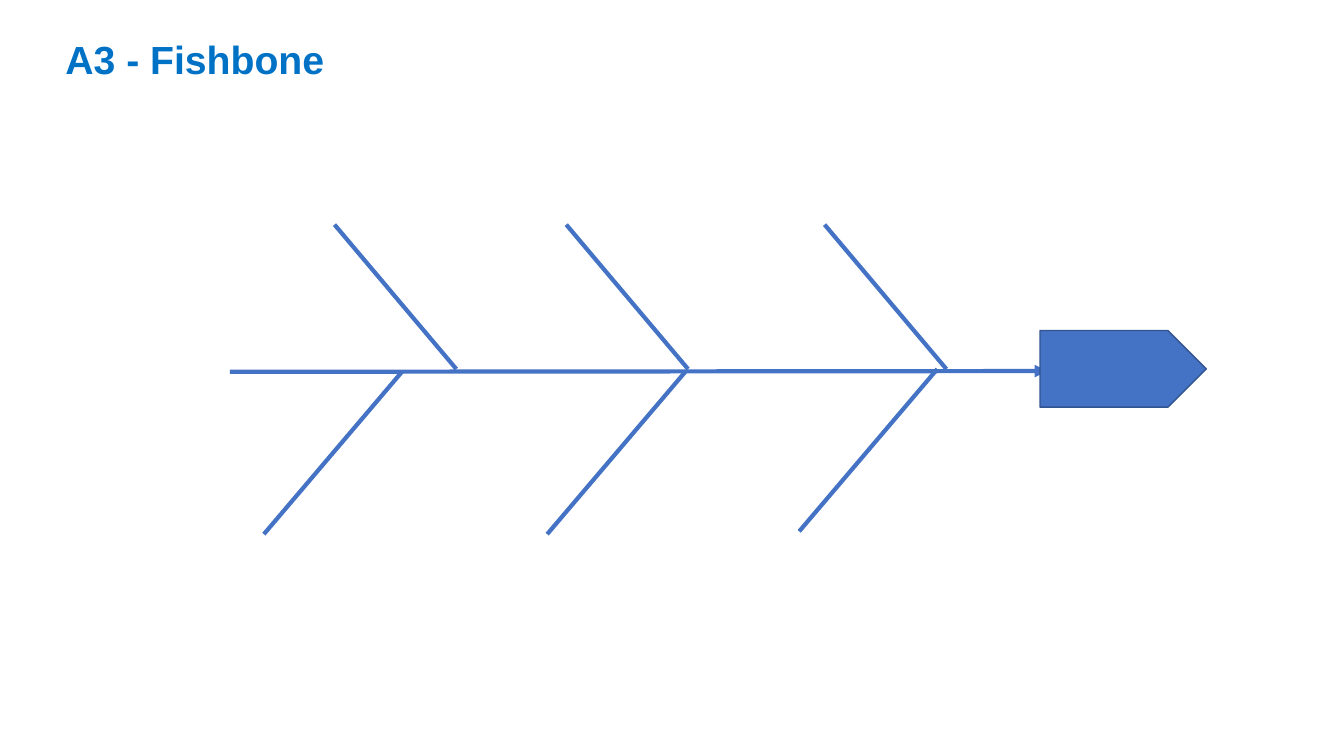
from dataclasses import dataclass

from pptx import Presentation
from pptx.dml.color import RGBColor as RGB
from pptx.enum.shapes import MSO_CONNECTOR as CONN, MSO_SHAPE as SHAPE
from pptx.enum.text import MSO_ANCHOR as ANCHOR
from pptx.oxml.ns import qn
from pptx.util import Cm, Pt
from lxml.etree import SubElement


@dataclass(frozen=True)
class Theme:
    title: RGB = RGB(0x00, 0x72, 0xC6)
    bone: RGB = RGB(0x44, 0x72, 0xC4)
    outline: RGB = RGB(0x32, 0x54, 0x91)
    font: str = "Arial"
    title_size: Pt = Pt(28)
    bone_width: Pt = Pt(3)
    outline_width: Pt = Pt(1)


THEME = Theme()
UPPER_STARTS = [(8.43, 5.66), (14.27, 5.66), (20.78, 5.66)]
UPPER_SPAN = (3.07, 3.64)
LOWER_STARTS = [(10.13, 9.37), (17.27, 9.37), (23.62, 9.3)]
LOWER_SPAN = (-3.48, 4.09)


def add_title(s, text, x, y, w, h):
    tf = s.shapes.add_textbox(Cm(x), Cm(y), Cm(w), Cm(h)).text_frame
    tf.word_wrap = True
    tf.vertical_anchor = ANCHOR.TOP
    p = tf.paragraphs[0]
    p.text = text
    p.line_spacing = 0.9
    p.font.name = THEME.font
    p.font.size = THEME.title_size
    p.font.bold = True
    p.font.color.rgb = THEME.title


def add_bone(s, start, span, arrow=False):
    (x, y), (dx, dy) = start, span
    sp = s.shapes.add_connector(CONN.STRAIGHT, Cm(x), Cm(y), Cm(x + dx), Cm(y + dy))
    sp.line.color.rgb = THEME.bone
    sp.line.width = THEME.bone_width
    if arrow:
        SubElement(sp.line._get_or_add_ln(), qn("a:tailEnd"), type="triangle")
    SubElement(sp._element.spPr, qn("a:effectLst"))


def add_head(s, x, y, w, h):
    sp = s.shapes.add_shape(SHAPE.PENTAGON, Cm(x), Cm(y), Cm(w), Cm(h))
    sp.shadow.inherit = False
    sp.fill.solid()
    sp.fill.fore_color.rgb = THEME.bone
    sp.line.color.rgb = THEME.outline
    sp.line.width = THEME.outline_width


def main():
    prs = Presentation()
    prs.slide_width, prs.slide_height = Cm(33.87), Cm(19.05)
    s = prs.slides.add_slide(prs.slide_layouts[6])

    add_title(s, "A3 - Fishbone", 1.4, 0.91, 26.09, 1.6)
    add_bone(s, (5.79, 9.37), (20.6, -0.02), arrow=True)
    add_head(s, 26.21, 8.33, 4.19, 1.93)
    for starts, span in ((UPPER_STARTS, UPPER_SPAN), (LOWER_STARTS, LOWER_SPAN)):
        for start in starts:
            add_bone(s, start, span)

    prs.save("out.pptx")


if __name__ == "__main__":
    main()
